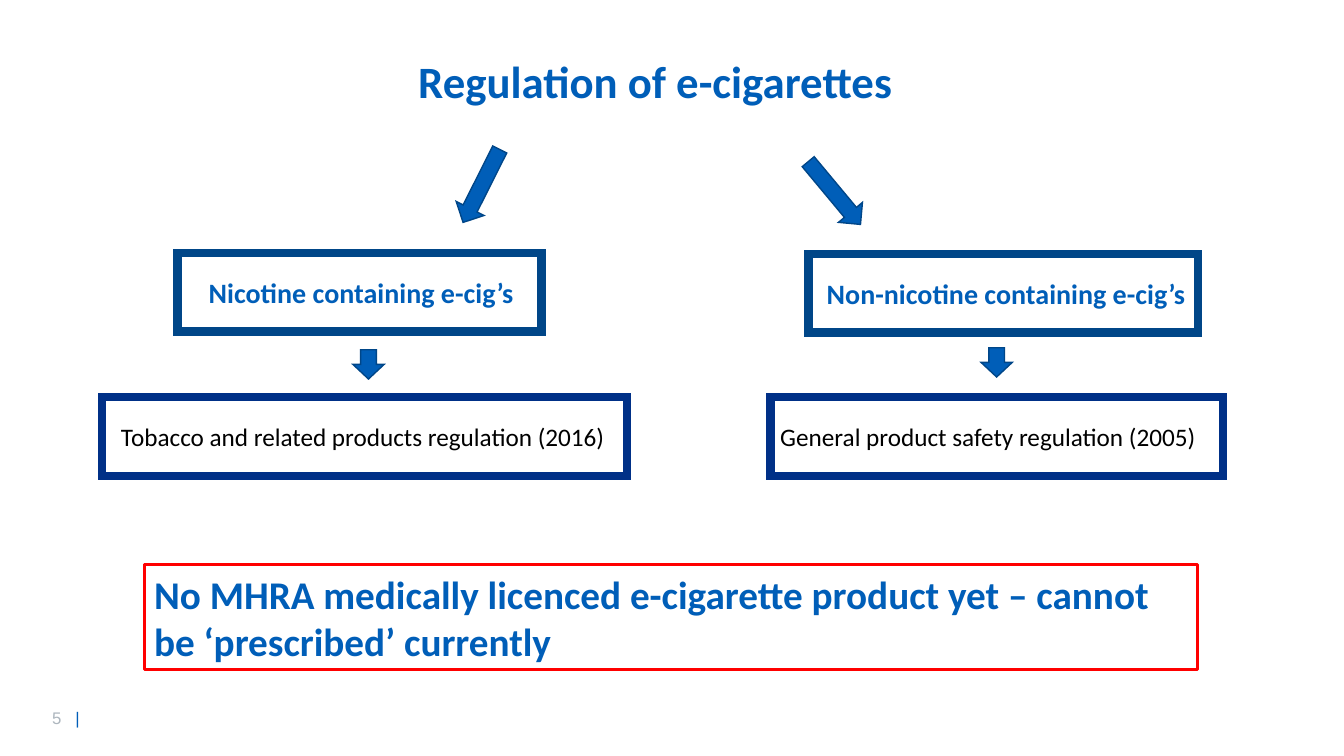
from dataclasses import dataclass
from lxml.etree import SubElement
from pptx import Presentation
from pptx.dml.color import RGBColor
from pptx.enum.shapes import MSO_SHAPE
from pptx.enum.text import MSO_ANCHOR, MSO_AUTO_SIZE, PP_ALIGN
from pptx.oxml.ns import qn
from pptx.util import Inches, Pt


@dataclass(frozen=True)
class Theme:
    blue: str = "005EB8"
    deep: str = "004688"
    navy: str = "003087"
    red: str = "FF0000"
    grey: str = "ADB6BE"
    black: str = "000000"
    font: str = "Calibri"
    foot: str = "Arial"
    title: int = 32
    note: int = 28
    head: int = 20
    body: int = 18
    small: int = 12


LOOK = Theme()


def assign(target, values):
    for name, value in values.items():
        setattr(target, name, value)


def write(par, text, size, color, bold=False, font=LOOK.font):
    run = par.add_run()
    run.text = text
    assign(run.font, {"name": font, "size": Pt(size), "bold": bold})
    run.font.color.rgb = RGBColor.from_string(color)


def draw(slide, kind, box, line, width, fill=None, miter=True):
    shape = slide.shapes.add_shape(kind, *map(Inches, box))
    shape.shadow.inherit = False
    if fill:
        shape.fill.solid()
        shape.fill.fore_color.rgb = RGBColor.from_string(fill)
    else:
        shape.fill.background()
    shape.line.color.rgb = RGBColor.from_string(line)
    shape.line.width = Pt(width)
    if miter:
        edge = shape._element.spPr.find(qn("a:ln"))
        SubElement(edge, qn("a:miter"), lim="800000")
    return shape


def arrow(slide, box, turn=0):
    shape = draw(slide, MSO_SHAPE.DOWN_ARROW, box, LOOK.deep, 1, LOOK.blue)
    shape.rotation = turn


def panel(slide, box, text, inset, line, width, size, color, bold, miter=True):
    shape = draw(slide, MSO_SHAPE.RECTANGLE, box, line, width, miter=miter)
    frame = shape.text_frame
    assign(frame, {
        "word_wrap": True,
        "vertical_anchor": MSO_ANCHOR.MIDDLE,
        "margin_left": Inches(inset),
        "margin_right": 0,
    })
    par = frame.paragraphs[0]
    par.alignment = PP_ALIGN.LEFT
    write(par, text, size, color, bold)


def heading(slide, box, text):
    title = slide.shapes.title
    names = ("left", "top", "width", "height")
    assign(title, dict(zip(names, map(Inches, box))))
    frame = title.text_frame
    assign(frame, {
        "word_wrap": False,
        "auto_size": MSO_AUTO_SIZE.NONE,
        "vertical_anchor": MSO_ANCHOR.MIDDLE,
    })
    frame.paragraphs[0].alignment = PP_ALIGN.CENTER
    write(frame.paragraphs[0], text, LOOK.title, LOOK.blue, True)


def branch(slide, box, head, rule):
    left, top, width, height = box
    shift, wide, drop, inset, text = head
    panel(slide, (left + shift, top + drop, wide, height), text, inset,
          LOOK.deep, 6, LOOK.head, LOOK.blue, True)
    inset, text = rule
    panel(slide, (left, top + 1.43, width, height), text, inset,
          LOOK.navy, 6, LOOK.body, LOOK.black, False)


def notice(slide, box, text):
    panel(slide, box, text, 0.1, LOOK.red, 2.25, LOOK.note, LOOK.blue, True,
          miter=False)


def footer(slide, box, page):
    frame = slide.shapes.add_textbox(*map(Inches, box)).text_frame
    frame.word_wrap = True
    par = frame.paragraphs[0]
    tabs = SubElement(par._p.get_or_add_pPr(), qn("a:tabLst"))
    SubElement(tabs, qn("a:tab"), pos=str(Inches(0.23)), algn="l")
    write(par, page, LOOK.small, LOOK.grey, font=LOOK.foot)
    write(par, "\t|", LOOK.small, LOOK.blue, font=LOOK.foot)


def main():
    deck = Presentation()
    assign(deck, {"slide_width": Inches(13.33), "slide_height": Inches(7.5)})
    slide = deck.slides.add_slide(deck.slide_layouts[5])
    footer(slide, (0.42, 6.97, 0.94, 0.3), "5")
    heading(slide, (4.02, 0.48, 4.96, 0.64), "Regulation of e-cigarettes")
    branch(slide, (1.01, 2.51, 5.21, 0.78),
           (0.75, 3.61, 0, 0.31, "Nicotine containing e-cig’s"),
           (0.19, "Tobacco and related products regulation (2016)"))
    branch(slide, (7.64, 2.51, 4.49, 0.78),
           (0.38, 3.86, 0.01, 0.18, "Non-nicotine containing e-cig’s"),
           (0.1, "General product safety regulation (2005)"))
    notice(slide, (1.43, 5.6, 10.45, 1.04),
           "No MHRA medically licenced e-cigarette product yet – "
           "cannot be ‘prescribed’ currently")
    for left, top, height, turn in (
        (4.62, 1.44, 0.81, 26.7),
        (8.12, 1.51, 0.81, 320.2),
        (3.5, 3.47, 0.29, 0),
        (9.73, 3.45, 0.29, 0),
    ):
        arrow(slide, (left, top, 0.31, height), turn)
    deck.save("out.pptx")


if __name__ == "__main__":
    main()
